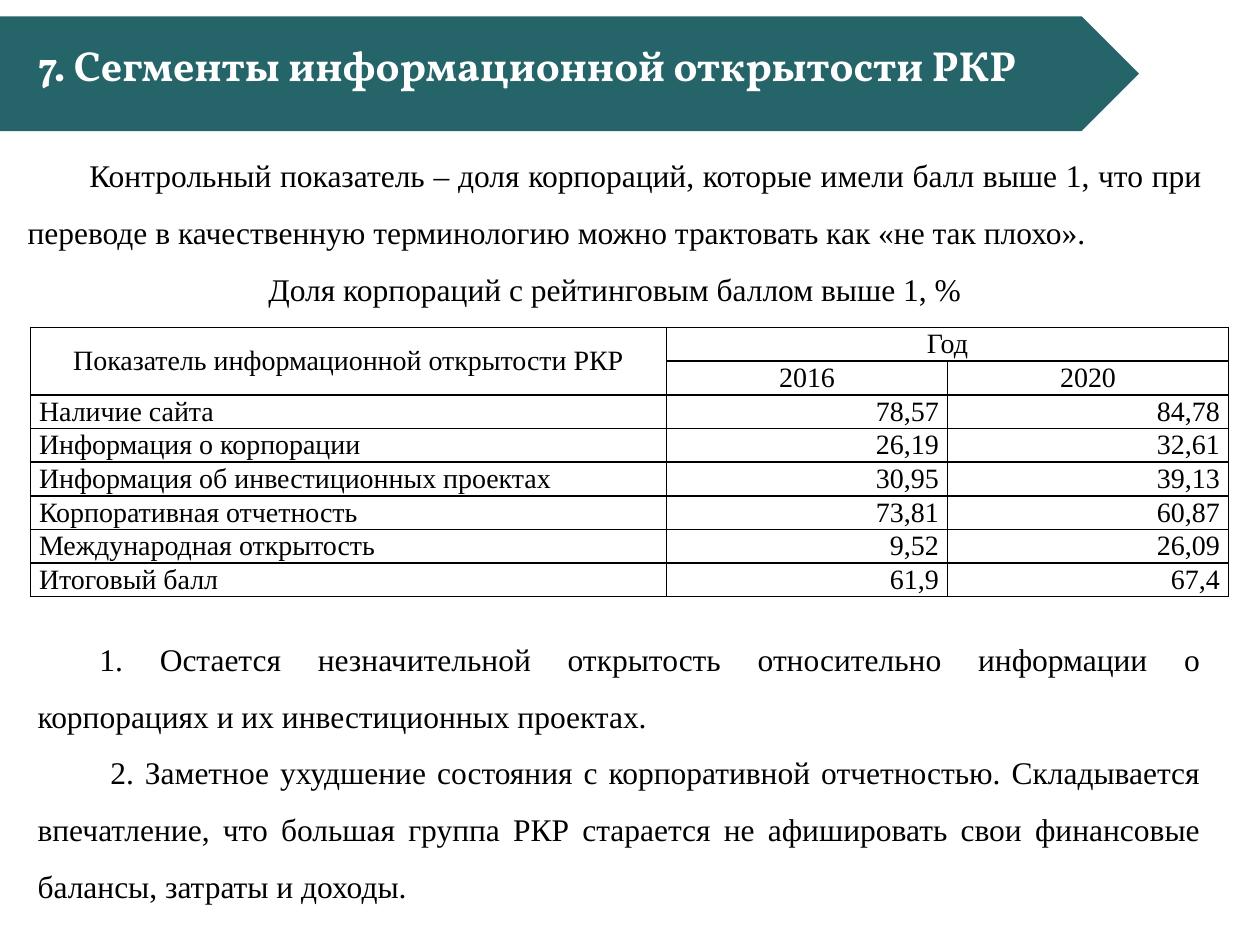
from lxml import etree
from pptx import Presentation
from pptx.dml.color import RGBColor
from pptx.enum.shapes import MSO_SHAPE
from pptx.enum.text import MSO_ANCHOR, MSO_AUTO_SIZE, PP_ALIGN
from pptx.oxml.ns import qn
from pptx.util import Inches, Pt

TEAL = RGBColor(0x25, 0x65, 0x69)
WHITE = RGBColor(0xFF, 0xFF, 0xFF)
BLACK = RGBColor(0, 0, 0)
LEFT, CENTER, RIGHT, JUSTIFY = PP_ALIGN.LEFT, PP_ALIGN.CENTER, PP_ALIGN.RIGHT, PP_ALIGN.JUSTIFY
TOP, MIDDLE = MSO_ANCHOR.TOP, MSO_ANCHOR.MIDDLE
NO_AUTOFIT = MSO_AUTO_SIZE.NONE
PENTAGON = MSO_SHAPE.PENTAGON


def write(paragraph, text, font="Times New Roman", size=18, color=BLACK, bold=False,
          align=LEFT, spacing=1.0, indent=0):
    paragraph.alignment = align
    paragraph.line_spacing = spacing
    if indent:
        paragraph._p.get_or_add_pPr().set("indent", str(Inches(indent)))
    run = paragraph.add_run()
    run.text = text
    run.font.name = font
    run.font.size = Pt(size)
    run.font.bold = bold
    run.font.color.rgb = color


def add_borders(cell):
    properties = cell._tc.get_or_add_tcPr()
    for side in ("a:lnL", "a:lnR", "a:lnT", "a:lnB"):
        line = etree.SubElement(properties, qn(side), w=str(Pt(1)))
        fill = etree.SubElement(line, qn("a:solidFill"))
        etree.SubElement(fill, qn("a:srgbClr"), val=str(BLACK))


presentation = Presentation()
presentation.slide_width = Inches(10)
presentation.slide_height = Inches(7.5)
slide = presentation.slides.add_slide(presentation.slide_layouts[5])

# Title on its arrow banner
banner = slide.shapes.add_shape(PENTAGON, Inches(0), Inches(0.13), Inches(9.04), Inches(0.91))
banner.shadow.inherit = False
banner.fill.solid()
banner.fill.fore_color.rgb = TEAL
banner.line.fill.background()

title = slide.shapes.title
title.left, title.top, title.width, title.height = (
    Inches(0.2), Inches(0.26), Inches(8.08), Inches(0.5))
title.text_frame.auto_size = NO_AUTOFIT
title.text_frame.word_wrap = False
title.text_frame.vertical_anchor = TOP
write(title.text_frame.paragraphs[0], "7. Сегменты информационной открытости РКР",
      font="Vollkorn", size=24, color=WHITE, bold=True)
banner._element.addnext(title._element)  # title in front of the banner

# Text above and below the table
text_blocks = [
    ((0.12, 1.04, 9.52, 1.41), [
        ("Контрольный показатель – доля корпораций, которые имели балл выше 1, что при "
         "переводе в качественную терминологию можно трактовать как «не так плохо».",
         JUSTIFY, 0.49),
        ("Доля корпораций с рейтинговым баллом выше 1, %", CENTER, 0),
    ]),
    ((0.2, 4.88, 9.43, 2.32), [
        ("1. Остается незначительной открытость относительно информации о корпорациях "
         "и их инвестиционных проектах.", JUSTIFY, 0.49),
        (" 2. Заметное ухудшение состояния с корпоративной отчетностью. Складывается "
         "впечатление, что большая группа РКР старается не афишировать свои финансовые "
         "балансы, затраты и доходы.", JUSTIFY, 0.49),
    ]),
]
for position, paragraphs in text_blocks:
    frame = slide.shapes.add_textbox(*map(Inches, position)).text_frame
    frame.word_wrap = True
    for index, (text, align, indent) in enumerate(paragraphs):
        paragraph = frame.add_paragraph() if index else frame.paragraphs[0]
        write(paragraph, text, align=align, spacing=1.5, indent=indent)

# Share of corporations by indicator and year
rows = [
    ("Показатель информационной открытости РКР", "Год", ""),
    ("", "2016", "2020"),
    ("Наличие сайта", "78,57", "84,78"),
    ("Информация о корпорации", "26,19", "32,61"),
    ("Информация об инвестиционных проектах", "30,95", "39,13"),
    ("Корпоративная отчетность", "73,81", "60,87"),
    ("Международная открытость", "9,52", "26,09"),
    ("Итоговый балл", "61,9", "67,4"),
]
HEADER_ROWS = 2
table = slide.shapes.add_table(len(rows), 3, Inches(0.24), Inches(2.6),
                               Inches(9.52), Inches(2.13)).table
table.first_row = False
table.horz_banding = False
for column, width in zip(table.columns, (5.05, 2.23, 2.23)):
    column.width = Inches(width)

for row_index, row in enumerate(rows):
    for column_index, text in enumerate(row):
        cell = table.cell(row_index, column_index)
        cell.margin_left = cell.margin_right = Inches(0.07)
        cell.margin_top = cell.margin_bottom = 0
        cell.vertical_anchor = MIDDLE
        add_borders(cell)
        cell.fill.background()
        if row_index < HEADER_ROWS:
            align = CENTER
        else:
            align = RIGHT if column_index else LEFT
        write(cell.text_frame.paragraphs[0], text, size=16, align=align)

table.cell(0, 0).merge(table.cell(1, 0))
table.cell(0, 1).merge(table.cell(0, 2))

presentation.save("out.pptx")
